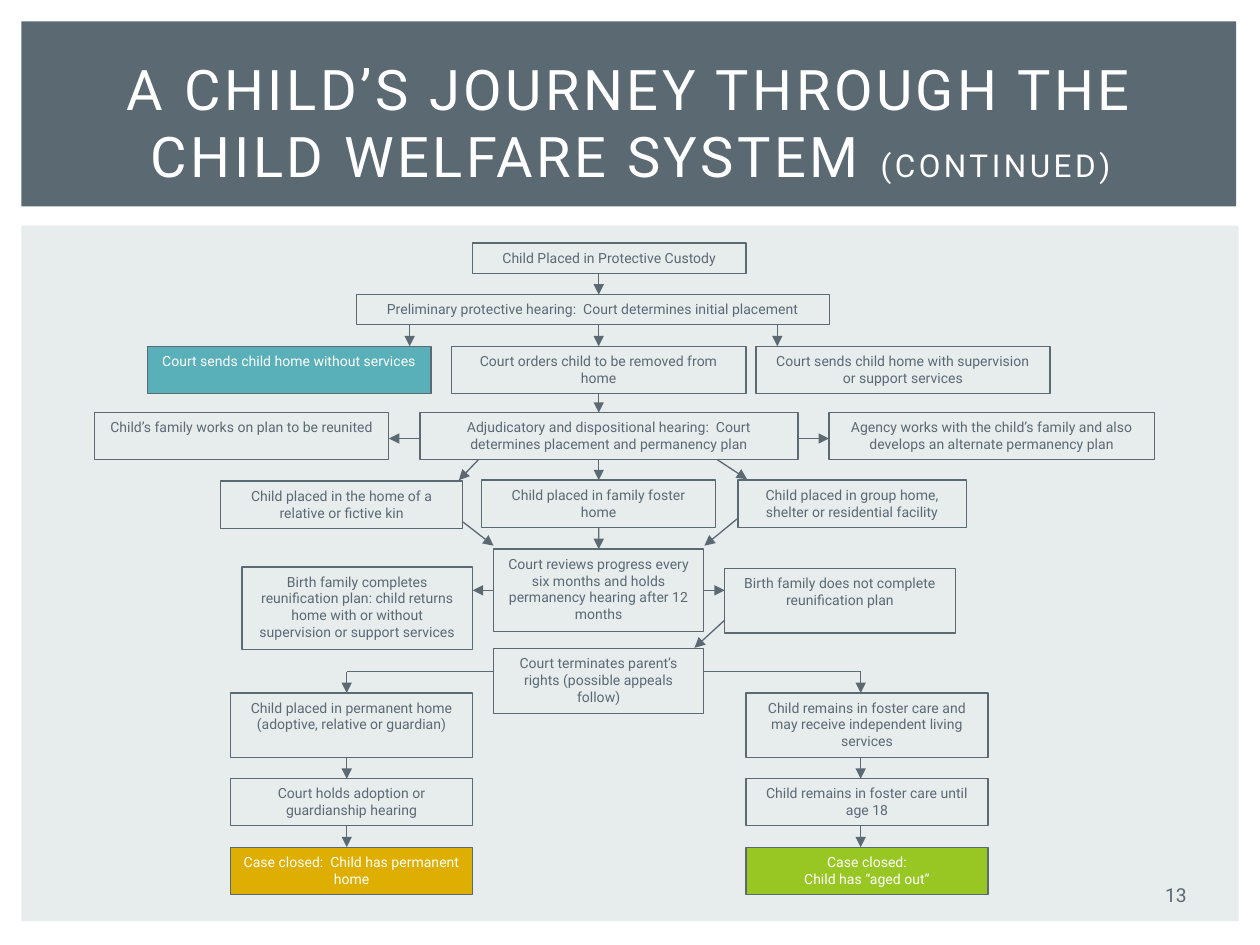
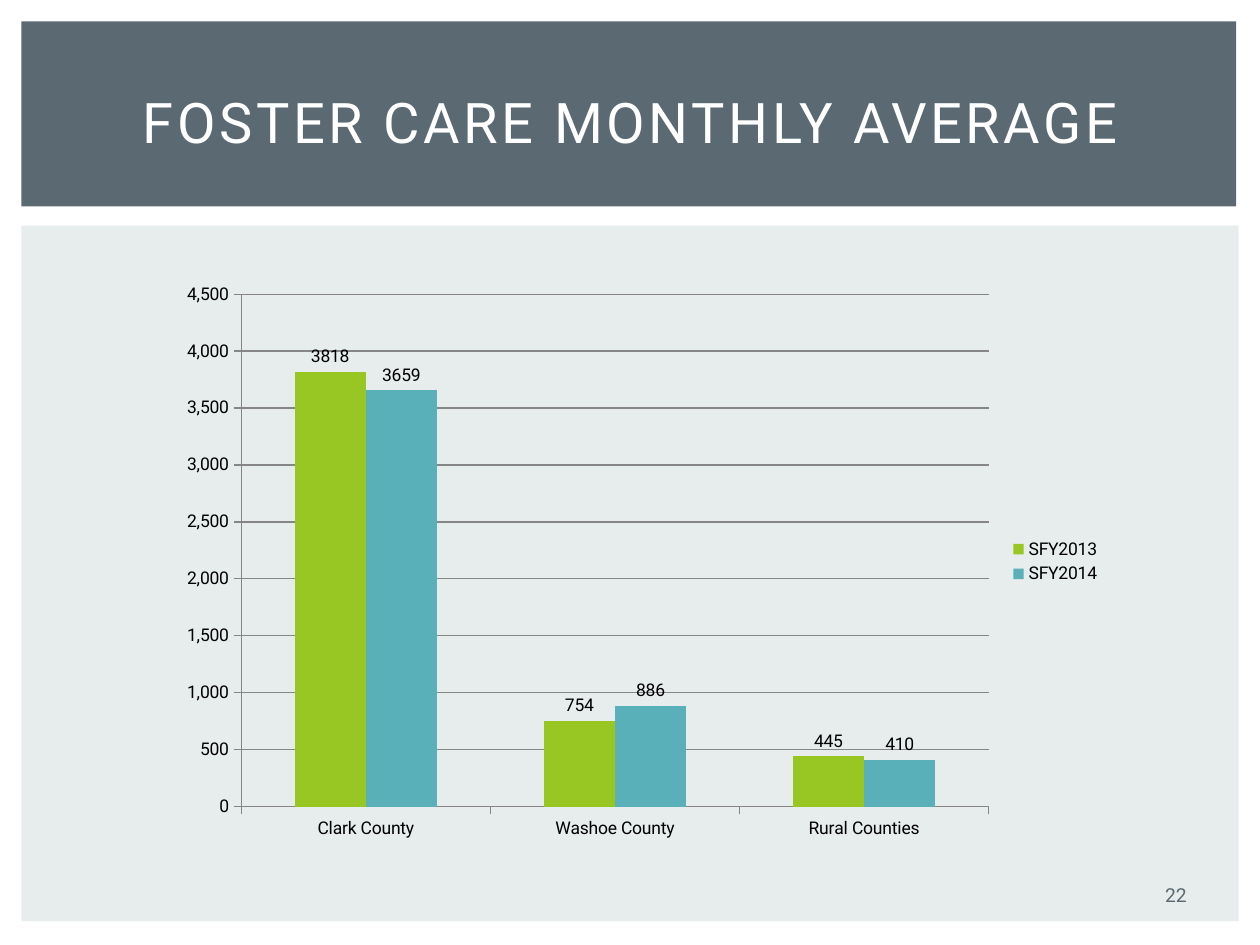
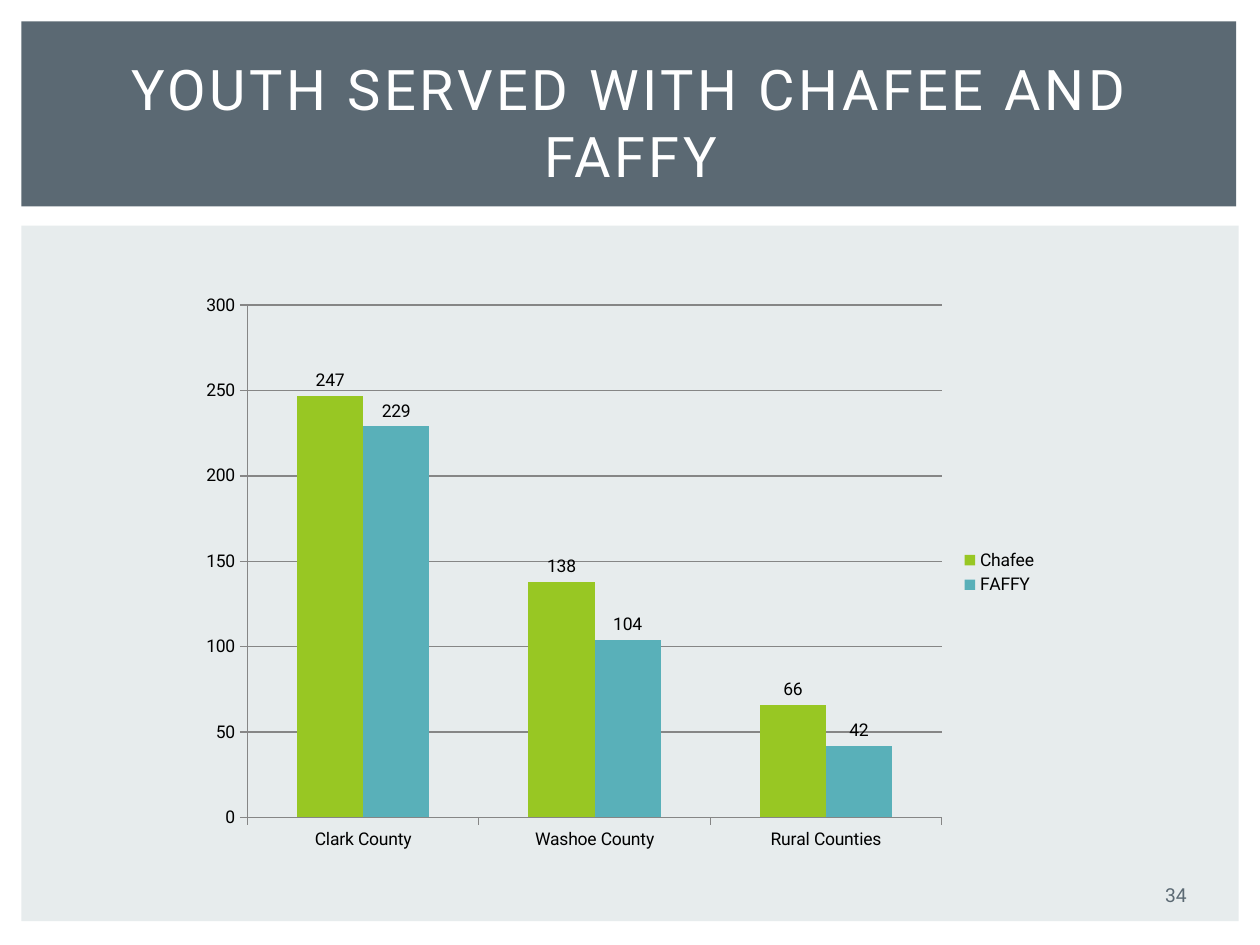
import dataclasses

import pptx
import pptx.chart.data
import pptx.dml.color
import pptx.enum.chart
import pptx.enum.shapes
import pptx.enum.text
import pptx.oxml.ns
import pptx.util

Cm = pptx.util.Cm
TOP, LEFT, BASE, RIGHT = range(4)


@dataclasses.dataclass(frozen=True)
class Theme:
    font: str = "Roboto"
    slate: str = "5B6973"
    mist: str = "E7ECED"
    white: str = "FFFFFF"
    black: str = "000000"
    teal: str = "59B0B9"
    gold: str = "DEAE00"
    green: str = "98C723"
    grid: str = "868686"
    head: float = 32
    small: float = 18
    page: float = 11
    mark: float = 10
    note: float = 8
    rule: float = 0.75


def tint(code):
    return pptx.dml.color.RGBColor.from_string(code)


def put(item, **vals):
    for key, val in vals.items():
        setattr(item, key, val)


class Deck:
    def __init__(self, theme):
        self.theme = theme
        self.file = pptx.Presentation()
        put(self.file, slide_width=Cm(25.4), slide_height=Cm(19.05))
        self.base = self.file.slide_layouts[5]
        self.slide = None

    def font(self, font, size, code):
        put(font, name=self.theme.font, size=pptx.util.Pt(size), bold=False)
        font.color.rgb = tint(code)

    def edge(self, line, code):
        line.color.rgb = tint(code)
        line.width = pptx.util.Pt(self.theme.rule)

    def frame(self, shape, anchor):
        put(shape.text_frame, word_wrap=True, vertical_anchor=anchor,
            auto_size=pptx.enum.text.MSO_AUTO_SIZE.NONE)
        return shape.text_frame

    def label(self, frame, text, size, code):
        frame.text = text
        for para in frame.paragraphs:
            para.alignment = pptx.enum.text.PP_ALIGN.CENTER
            self.font(para.runs[0].font, size, code)

    def rect(self, spot, fill=None, line=None):
        shape = self.slide.shapes.add_shape(
            pptx.enum.shapes.MSO_SHAPE.RECTANGLE, *map(Cm, spot))
        shape.shadow.inherit = False
        if fill:
            shape.fill.solid()
            shape.fill.fore_color.rgb = tint(fill)
        else:
            shape.fill.background()
        if line:
            self.edge(shape.line, line)
        else:
            shape.line.fill.background()
        return shape

    def bands(self):
        """Place the shared bands behind the layout's placeholders."""
        tree = self.base.shapes.element
        for spot, fill in (((0.43, 0.43, 24.49, 3.73), self.theme.slate),
                           ((0.43, 4.55, 24.54, 14.02), self.theme.mist)):
            tree.insert(2, self.rect(spot, fill).element)

    def page(self, number, *parts):
        """Start a slide; the second title part is set small."""
        first = self.slide is None
        self.slide = self.file.slides.add_slide(self.base)
        if first:
            self.bands()
        middle = pptx.enum.text.MSO_ANCHOR.MIDDLE
        title = self.slide.shapes.title
        put(title, left=Cm(1.07), top=Cm(0.99), width=Cm(23.29), height=Cm(2.92))
        para = self.frame(title, middle).paragraphs[0]
        para.alignment = pptx.enum.text.PP_ALIGN.CENTER
        for text, size in zip(parts, (self.theme.head, self.theme.small)):
            run = para.add_run()
            run.text = text
            self.font(run.font, size, self.theme.white)
        for prop in title.element.iter(pptx.oxml.ns.qn("a:rPr")):
            prop.set("spc", "200")
        foot = self.slide.shapes.add_textbox(*map(Cm, (22.89, 17.65, 1.63, 0.76)))
        self.label(self.frame(foot, middle), str(number),
                   self.theme.page, self.theme.slate)

    def box(self, spot, text, fill=None):
        shape = self.rect(spot, fill, self.theme.slate)
        frame = self.frame(shape, pptx.enum.text.MSO_ANCHOR.TOP)
        self.label(frame, text, self.theme.note,
                   self.theme.white if fill else self.theme.slate)
        return shape

    def line(self, ends, head=True, start=None, stop=None):
        """Draw a line; start and stop are (box, side) joins."""
        link = self.slide.shapes.add_connector(
            pptx.enum.shapes.MSO_CONNECTOR.STRAIGHT, *map(Cm, ends))
        if start:
            link.begin_connect(*start)
        if stop:
            link.end_connect(*stop)
        self.edge(link.line, self.theme.slate)
        prop = link.element.spPr
        if head:
            stroke = prop.find(pptx.oxml.ns.qn("a:ln"))
            tip = stroke.makeelement(pptx.oxml.ns.qn("a:tailEnd"),
                                     {"type": "triangle"})
            stroke.append(tip)
        prop.append(prop.makeelement(pptx.oxml.ns.qn("a:effectLst"), {}))

    def chart(self, spot, names, rows, top, step):
        enum = pptx.enum.chart
        data = pptx.chart.data.CategoryChartData()
        data.categories = names
        for name, vals in rows.items():
            data.add_series(name, vals)
        chart = self.slide.shapes.add_chart(
            enum.XL_CHART_TYPE.COLUMN_CLUSTERED, *map(Cm, spot), data).chart
        put(chart, has_title=False, has_legend=True)
        self.font(chart.font, self.theme.mark, self.theme.black)
        put(chart.legend, position=enum.XL_LEGEND_POSITION.RIGHT,
            include_in_layout=False)
        # Axes
        scale = chart.value_axis
        put(scale, minimum_scale=0, maximum_scale=top, major_unit=step,
            has_major_gridlines=True)
        put(scale.tick_labels, number_format="#,##0", number_format_is_linked=False)
        for axis in (scale, chart.category_axis):
            put(axis, major_tick_mark=enum.XL_TICK_MARK.OUTSIDE,
                minor_tick_mark=enum.XL_TICK_MARK.NONE)
            self.edge(axis.format.line, self.theme.grid)
        self.edge(scale.major_gridlines.format.line, self.theme.grid)
        # Columns and their values
        plot = chart.plots[0]
        put(plot, gap_width=150, overlap=0, vary_by_categories=False)
        for bars, code in zip(plot.series, (self.theme.green, self.theme.teal)):
            bars.format.fill.solid()
            bars.format.fill.fore_color.rgb = tint(code)
            put(bars.data_labels, show_value=True,
                position=enum.XL_LABEL_POSITION.OUTSIDE_END)
            self.font(bars.data_labels.font, self.theme.mark, self.theme.black)


def flow(deck):
    look = deck.theme
    one, two, three, four = 0.61, 0.95, 1.3, 1.66  # box heights by line count
    west, east, wide = 4.65, 15.04, 4.88  # outcome columns
    plan = {
        "start": (9.53, 4.9, 5.51, one, "Child Placed in Protective Custody"),
        "first": (7.19, 5.94, 9.53, one, "Preliminary protective hearing:  Court determines initial placement"),
        "home": (2.97, 6.98, 5.72, two, "Court sends child home without services", look.teal),
        "out": (9.1, 6.98, 5.94, two, "Court orders child to be removed from home"),
        "help": (15.24, 6.98, 5.93, two, "Court sends child home with supervision or support services"),
        "work": (1.91, 8.31, 5.93, two, "Child’s family works on plan to be reunited"),
        "hear": (8.47, 8.31, 7.62, two, "Adjudicatory and dispositional hearing:  Court determines placement and permanency plan"),
        "agent": (16.71, 8.31, 6.57, two, "Agency works with the child’s family and also develops an alternate permanency plan"),
        "kin": (4.45, 9.7, 4.88, two, "Child placed in the home of a relative or fictive kin"),
        "foster": (9.71, 9.68, 4.72, two, "Child placed in family foster home"),
        "group": (14.88, 9.68, 4.6, two, "Child placed in group home, shelter or residential facility"),
        "check": (9.95, 11.07, 4.24, four, "Court reviews progress every six months and holds permanency hearing after 12 months"),
        "done": (4.88, 11.43, 4.65, four, "Birth family completes reunification plan: child returns home with or without supervision or support services"),
        "fail": (14.61, 11.46, 4.65, three, "Birth family does not complete reunification plan"),
        "end": (9.95, 13.08, 4.24, three, "Court terminates parent’s rights (possible appeals follow)"),
        "place": (west, 13.97, wide, three, "Child placed in permanent home (adoptive, relative or guardian)"),
        "adopt": (west, 15.7, wide, two, "Court holds adoption or guardianship hearing"),
        "safe": (west, 17.08, wide, two, "Case closed:  Child has permanent home", look.gold),
        "stay": (east, 13.97, wide, three, "Child remains in foster care and may receive independent living services"),
        "age": (east, 15.7, wide, two, "Child remains in foster care until age 18"),
        "aged": (east, 17.08, wide, two, "Case closed:\nChild has “aged out”", look.green),
    }
    box = {key: deck.box(row[:4], *row[4:]) for key, row in plan.items()}

    # Main path down the middle
    mid = 12.07
    for top, low, start, stop in (
            (5.52, 5.94, None, None),
            (6.55, 6.98, None, "out"),
            (7.93, 8.32, "out", None),
            (9.26, 9.68, None, "foster"),
            (10.63, 11.07, "foster", "check")):
        deck.line((mid, top, mid, low),
                  start=start and (box[start], BASE),
                  stop=stop and (box[stop], TOP))

    # Branches from the hearings
    for ends in ((8.26, 6.55, 8.26, 6.98), (15.67, 6.55, 15.67, 6.98),
                 (8.47, 8.84, 7.84, 8.84), (16.09, 8.84, 16.71, 8.84),
                 (9.65, 9.26, 9.25, 9.68), (14.45, 9.26, 15.06, 9.66),
                 (9.33, 10.52, 9.95, 11.0), (14.86, 10.46, 14.2, 11.0),
                 (14.61, 12.5, 14.0, 13.06)):
        deck.line(ends)
    deck.line((9.95, 11.9, 9.53, 11.9), start=(box["check"], LEFT))
    deck.line((14.19, 11.9, 14.61, 11.9), start=(box["check"], RIGHT))

    # Outcome columns
    for side, x in ((9.95, 6.99), (14.19, 17.35)):
        deck.line((side, 13.54, x, 13.54), head=False)
        for top, low in ((13.54, 13.97), (15.27, 15.7), (16.65, 17.08)):
            deck.line((x, top, x, low))


def main():
    deck = Deck(Theme())
    names = ("Clark County", "Washoe County", "Rural Counties")

    # Journey chart
    deck.page(13, "A CHILD’S JOURNEY THROUGH THE CHILD WELFARE SYSTEM ", "(CONTINUED)")
    flow(deck)

    # Foster care by county
    deck.page(22, "FOSTER CARE MONTHLY AVERAGE")
    deck.chart((3.39, 5.5, 19.05, 11.64), names,
               {"SFY2013": (3818, 754, 445), "SFY2014": (3659, 886, 410)}, 4500, 500)

    # Youth served by county
    deck.page(34, "YOUTH SERVED WITH CHAFEE AND FAFFY")
    deck.chart((3.81, 5.72, 17.36, 11.64), names,
               {"Chafee": (247, 138, 66), "FAFFY": (229, 104, 42)}, 300, 50)

    deck.file.save("out.pptx")


if __name__ == "__main__":
    main()
